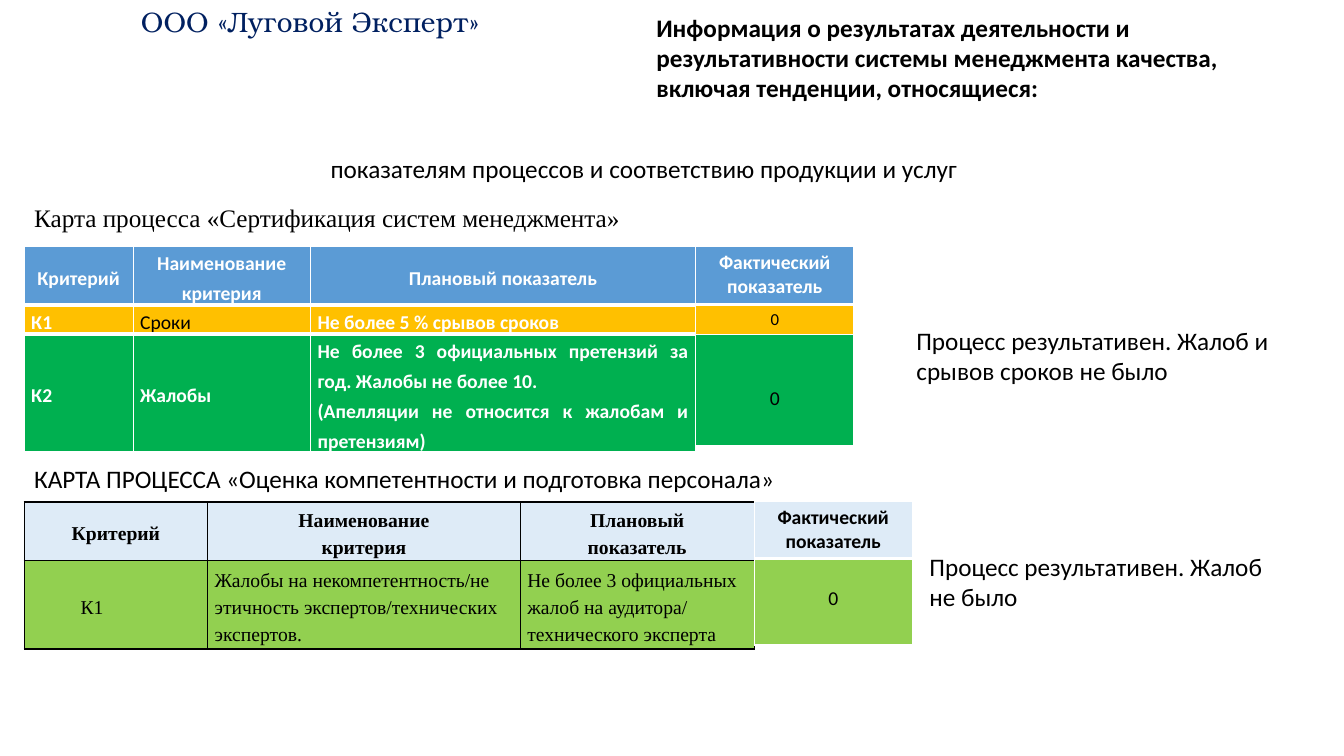
from dataclasses import dataclass, field

from lxml.etree import SubElement
from pptx import Presentation
from pptx.dml.color import RGBColor
from pptx.enum.text import MSO_ANCHOR, MSO_AUTO_SIZE, PP_ALIGN
from pptx.oxml.ns import qn
from pptx.util import Inches, Pt

BLACK = RGBColor(0x00, 0x00, 0x00)
WHITE = RGBColor(0xFF, 0xFF, 0xFF)
NAVY = RGBColor(0x00, 0x20, 0x60)
BLUE = RGBColor(0x5B, 0x9B, 0xD5)
PALE_BLUE = RGBColor(0xDE, 0xEB, 0xF7)
AMBER = RGBColor(0xFF, 0xC0, 0x00)
GREEN = RGBColor(0x00, 0xB0, 0x50)
LIME = RGBColor(0x92, 0xD0, 0x50)

SERIF = "Times New Roman"
THIN = (1, 1, 1, 1)
THICK_BOTTOM = (1, 1, 1, 3)
THICK_TOP = (1, 1, 3, 1)


@dataclass
class Label:
    text: str
    box: tuple[float, float, float, float]
    wrap: bool = True
    font: str = "Calibri"
    size: int = 18
    color: RGBColor = BLACK


@dataclass
class Entry:
    text: str
    color: RGBColor = BLACK
    bold: bool = False
    align: PP_ALIGN = PP_ALIGN.CENTER
    size: int = 14
    indent: float = 0
    top: float = 0.05


@dataclass
class Row:
    height: float
    fill: RGBColor
    entries: list[Entry]
    borders: tuple[int, int, int, int] = THIN


@dataclass
class Grid:
    left: float
    top: float
    widths: list[float]
    rows: list[Row] = field(default_factory=list)
    font: str = "Calibri"
    line_color: RGBColor = WHITE
    compact: bool = True


def apply(target: object, values: dict) -> None:
    for key, value in values.items():
        setattr(target, key, value)


def fill_label(shape, label: Label, bold: bool = False) -> None:
    frame = shape.text_frame
    frame.text = label.text
    apply(frame, {
        "word_wrap": label.wrap,
        "auto_size": MSO_AUTO_SIZE.SHAPE_TO_FIT_TEXT,
        "vertical_anchor": MSO_ANCHOR.TOP,
    })
    paragraph = frame.paragraphs[0]
    paragraph.alignment = PP_ALIGN.LEFT
    font = paragraph.runs[0].font
    apply(font, {"name": label.font, "size": Pt(label.size), "bold": bold})
    font.color.rgb = label.color


def add_borders(cell, widths: tuple[int, int, int, int], color: RGBColor) -> None:
    properties = cell._tc.get_or_add_tcPr()
    for side, width in zip(("lnL", "lnR", "lnT", "lnB"), widths):
        line = SubElement(properties, qn(f"a:{side}"), w=str(Pt(width)))
        solid = SubElement(line, qn("a:solidFill"))
        SubElement(solid, qn("a:srgbClr"), val=str(color))


def fill_cell(cell, entry: Entry, row: Row, grid: Grid) -> None:
    add_borders(cell, row.borders, grid.line_color)
    cell.fill.solid()
    cell.fill.fore_color.rgb = row.fill
    cell.text = entry.text
    if grid.compact:
        apply(cell, {
            "margin_left": Inches(0.07), "margin_right": Inches(0.07),
            "margin_top": 0, "margin_bottom": 0,
            "vertical_anchor": MSO_ANCHOR.MIDDLE,
        })
    else:
        cell.margin_top = Inches(entry.top)
    for paragraph in cell.text_frame.paragraphs:
        apply(paragraph, {
            "alignment": entry.align,
            "line_spacing": 1.25 if grid.compact else 1.0,
        })
        if entry.indent:
            paragraph._p.get_or_add_pPr().set("indent", str(Inches(entry.indent)))
        font = paragraph.runs[0].font
        apply(font, {"name": grid.font, "size": Pt(entry.size), "bold": entry.bold})
        font.color.rgb = entry.color


def draw_grid(slide, grid: Grid) -> None:
    table = slide.shapes.add_table(
        len(grid.rows), len(grid.widths), Inches(grid.left), Inches(grid.top),
        Inches(sum(grid.widths)), Inches(sum(row.height for row in grid.rows)),
    ).table
    apply(table, {"first_row": False, "horz_banding": False})
    for column, width in zip(table.columns, grid.widths):
        column.width = Inches(width)
    for table_row, row in zip(table.rows, grid.rows):
        table_row.height = Inches(row.height)
        for cell, entry in zip(table_row.cells, row.entries):
            fill_cell(cell, entry, row, grid)


def heads(color: RGBColor, *texts: str) -> list[Entry]:
    return [Entry(text, color, bold=True) for text in texts]


def white_bold(text: str) -> Entry:
    return Entry(text, WHITE, True, PP_ALIGN.JUSTIFY)


HEADING = Label(
    "Информация о результатах деятельности и результативности системы менеджмента "
    "качества, включая тенденции, относящиеся:", (6.41, 0.07, 6.67, 1.01))

LABELS = [
    Label("ООО «Луговой Эксперт»", (1.3, 0, 3.59, 0.44), False,
          "TeX Gyre Bonum", 20, NAVY),
    Label("показателям процессов и соответствию продукции и услуг",
          (3.18, 1.47, 6.49, 0.4), False),
    Label("Карта процесса «Сертификация систем менеджмента»",
          (0.24, 1.96, 6.07, 0.4), False, SERIF),
    Label("Процесс результативен. Жалоб и срывов сроков не было",
          (8.99, 3.18, 4.08, 0.71)),
    Label("Процесс результативен. Жалоб не было", (9.12, 5.42, 3.68, 0.71)),
    Label("КАРТА ПРОЦЕССА «Оценка компетентности и подготовка персонала»",
          (0.24, 4.55, 11.9, 0.4)),
]

GRIDS = [
    Grid(0.24, 2.44, [1.08, 1.76, 3.82], [
        Row(0.58, BLUE, heads(WHITE, "Критерий", "Наименование\nкритерия",
                              "Плановый показатель"), THICK_BOTTOM),
        Row(0.29, AMBER, [white_bold("К1"), Entry("Сроки", align=PP_ALIGN.JUSTIFY),
                          white_bold("Не более 5 % срывов сроков")]),
        Row(1.1, GREEN, [white_bold("К2"), white_bold("Жалобы"), white_bold(
            "Не более 3 официальных претензий за год. Жалобы не более 10.\n"
            "(Апелляции не относится к жалобам и претензиям)")], THICK_TOP),
    ]),
    Grid(6.9, 2.44, [1.57], [
        Row(0.58, BLUE, heads(WHITE, "Фактический показатель"), THICK_BOTTOM),
        Row(0.29, AMBER, [Entry("0", size=12)]),
        Row(1.1, GREEN, [Entry("0", top=0.52)]),
    ], compact=False),
    Grid(0.24, 4.98, [1.82, 3.1, 2.32], [
        Row(0.58, PALE_BLUE, heads(BLACK, "Критерий", "Наименование\nкритерия",
                                   "Плановый\nпоказатель")),
        Row(0.82, LIME, [
            Entry("К1", align=PP_ALIGN.LEFT, indent=0.49),
            Entry("Жалобы на некомпетентность/не этичность экспертов/технических "
                  "экспертов.", align=PP_ALIGN.LEFT),
            Entry("Не более 3 официальных жалоб на аудитора/ технического эксперта",
                  align=PP_ALIGN.LEFT)]),
    ], SERIF, BLACK),
    Grid(7.48, 4.97, [1.57], [
        Row(0.57, PALE_BLUE, heads(BLACK, "Фактический показатель"), THICK_BOTTOM),
        Row(0.86, LIME, [Entry("0", top=0.28)]),
    ], compact=False),
]


def main() -> None:
    deck = Presentation()
    apply(deck, {"slide_width": Inches(13.33), "slide_height": Inches(7.5)})
    slide = deck.slides.add_slide(deck.slide_layouts[5])
    title = slide.shapes.title
    sides = ("left", "top", "width", "height")
    apply(title, dict(zip(sides, map(Inches, HEADING.box))))
    fill_label(title, HEADING, bold=True)
    for label in LABELS:
        fill_label(slide.shapes.add_textbox(*map(Inches, label.box)), label)
    for grid in GRIDS:
        draw_grid(slide, grid)
    deck.save("out.pptx")


if __name__ == "__main__":
    main()
